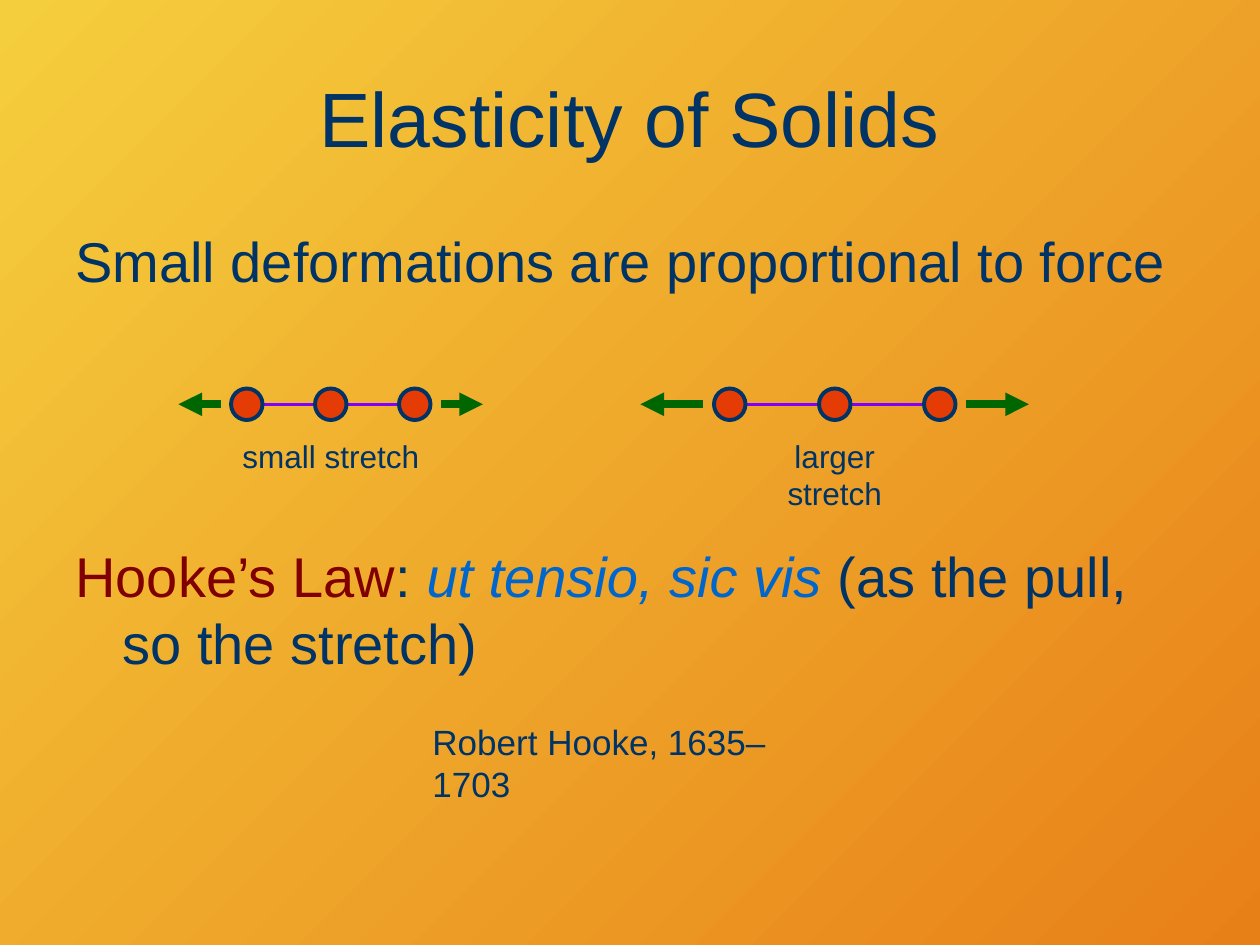
from pptx import Presentation
from pptx.dml.color import RGBColor
from pptx.enum.shapes import MSO_CONNECTOR as CONN, MSO_SHAPE as SHAPE
from pptx.enum.text import MSO_ANCHOR as ANCHOR, PP_ALIGN as ALIGN
from pptx.oxml.ns import qn
from pptx.util import Pt
from lxml.etree import SubElement

PX = 7620
COLORS = {
    "yellow": "F5CE3D", "orange": "E88018", "navy": "003366", "bond": "8000FE",
    "atom": "E53C05", "force": "006600", "maroon": "800000", "blue": "0066CC",
}


def px(n):
    """Turn px into EMU."""
    return int(n * PX)


def rgb(name):
    """Look up a named colour."""
    return RGBColor.from_string(COLORS[name])


def add_background(s):
    """Fill the slide with a diagonal gradient."""
    fill = s.background.fill
    fill.gradient()
    fill.gradient_angle = 315
    for stop, name, pos in zip(fill.gradient_stops, ("yellow", "orange"), (0, 1)):
        stop.color.rgb = rgb(name)
        stop.position = pos


def add_text(shapes, box, runs, size, align=ALIGN.LEFT, anchor=ANCHOR.TOP, wrap=True):
    """Place one paragraph of (text, colour, italic) runs in a box."""
    tf = shapes.add_textbox(*map(px, box)).text_frame
    tf.word_wrap = wrap
    tf.vertical_anchor = anchor
    p = tf.paragraphs[0]
    p.alignment = align
    p.font.name = "Arial"
    p.font.size = Pt(size)
    for text, color, italic in runs:
        r = p.add_run()
        r.text = text
        r.font.color.rgb = rgb(color)
        if italic:
            r.font.italic = True
    return p


def add_statement(s, box, runs):
    """Place a large paragraph with a hanging indent."""
    p = add_text(s.shapes, box, runs, 32)
    p.space_before = Pt(4)
    pPr = p._p.get_or_add_pPr()
    pPr.set("marL", str(px(45)))
    pPr.set("indent", str(px(-45)))


def add_line(shapes, x1, x2, y, color, width, arrow=False):
    """Draw a horizontal line, with an arrowhead at its end if asked."""
    c = shapes.add_connector(CONN.STRAIGHT, px(x1), px(y), px(x2), px(y))
    c.line.color.rgb = rgb(color)
    c.line.width = Pt(width)
    if arrow:
        SubElement(c.line._get_or_add_ln(), qn("a:tailEnd"), type="triangle")
    SubElement(c._element.spPr, qn("a:effectLst"))


def add_stretch(s, box, force, caption):
    """Draw three bonded atoms pulled apart by two force arrows, with a caption."""
    x, y, w, h = box
    shapes = s.shapes.add_group_shape().shapes
    d, gap = 30, 10
    mid = y + d / 2
    first, last = x + force + gap, x + w - force - gap - d
    step = (last - first) / 2
    lefts = [first + i * step for i in range(3)]
    for left in lefts[:-1]:
        add_line(shapes, left + d / 2, left + step + d / 2, mid, "bond", 1.5)
    for left in lefts:
        atom = shapes.add_shape(SHAPE.OVAL, px(left), px(y), px(d), px(d))
        atom.shadow.inherit = False
        atom.fill.solid()
        atom.fill.fore_color.rgb = rgb("atom")
        atom.line.color.rgb = rgb("navy")
        atom.line.width = Pt(2.25)
    add_line(shapes, x + force, x, mid, "force", 4.5, True)
    add_line(shapes, x + w - force, x + w, mid, "force", 4.5, True)
    add_text(shapes, (x + w / 2 - 98, y + 40, 196, h - 40), [(caption, "navy", False)],
             18, ALIGN.CENTER, wrap=False)


def main():
    """Build and save the slide."""
    prs = Presentation()
    prs.slide_width, prs.slide_height = px(1200), px(900)
    s = prs.slides.add_slide(prs.slide_layouts[6])
    add_background(s)
    add_text(s.shapes, (60, 36, 1080, 150), [("Elasticity of Solids", "navy", False)],
             44, ALIGN.CENTER, ANCHOR.MIDDLE)
    add_statement(s, (60, 210, 1080, 90),
                  [("Small deformations are proportional to force", "navy", False)])
    add_stretch(s, (170, 370, 290, 88), 40, "small stretch")
    add_stretch(s, (610, 370, 370, 88), 60, "larger stretch")
    add_statement(s, (60, 510, 1070, 140), [
        ("Hooke’s Law", "maroon", False),
        (": ", "navy", False),
        ("ut tensio, sic vis", "blue", True),
        (" (as the pull, so the stretch)", "navy", False),
    ])
    add_text(s.shapes, (400, 680, 405, 52), [("Robert Hooke, 1635–1703", "navy", False)], 20)
    prs.save("out.pptx")


if __name__ == "__main__":
    main()
